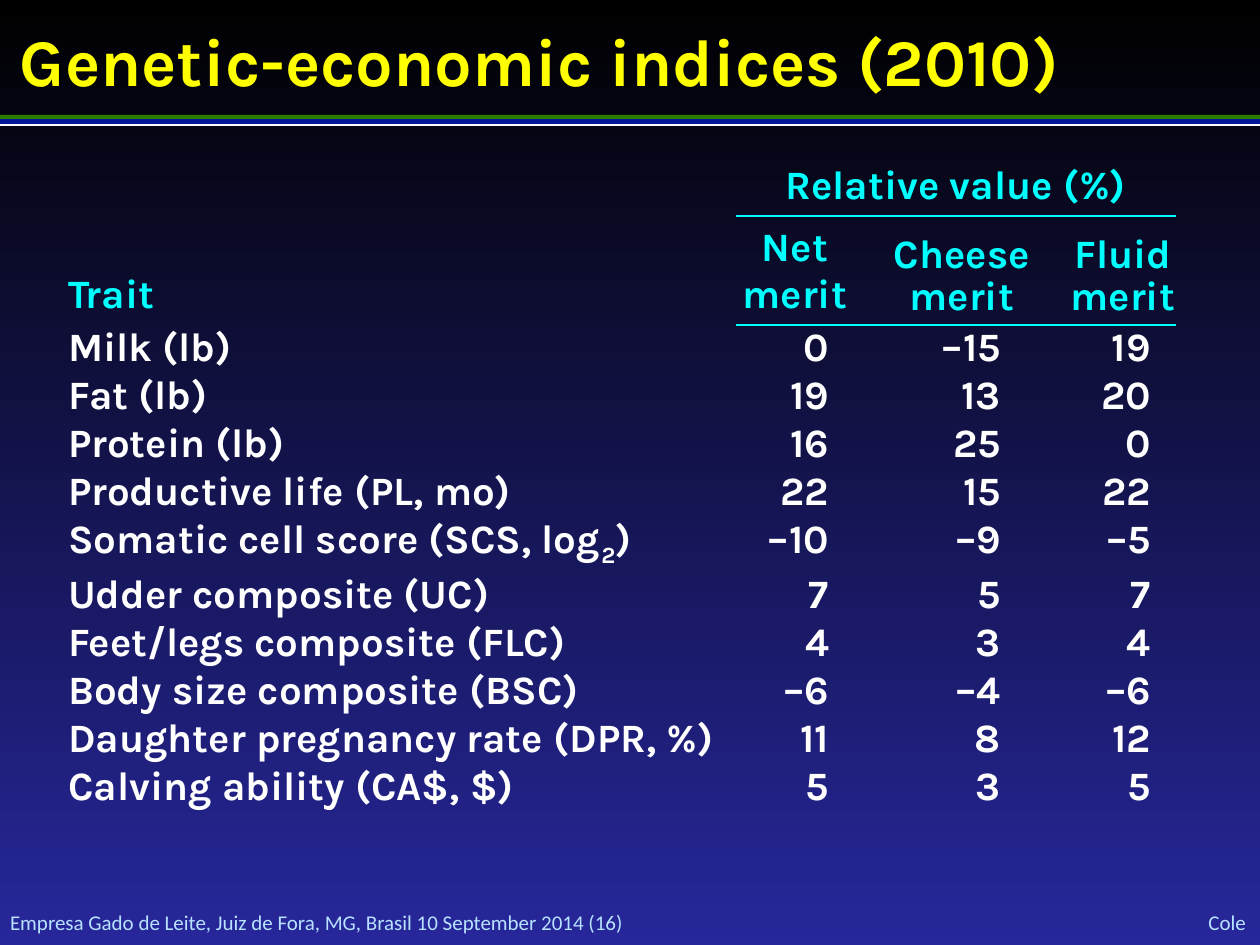
from lxml import etree
from pptx import Presentation
from pptx.dml.color import RGBColor
from pptx.enum.shapes import MSO_SHAPE
from pptx.enum.text import MSO_ANCHOR, MSO_AUTO_SIZE, PP_ALIGN
from pptx.oxml.ns import qn
from pptx.util import Pt

PX = 914400 // 126
LEFT, CENTER, RIGHT = PP_ALIGN.LEFT, PP_ALIGN.CENTER, PP_ALIGN.RIGHT
TOP, MIDDLE, BOTTOM = MSO_ANCHOR.TOP, MSO_ANCHOR.MIDDLE, MSO_ANCHOR.BOTTOM
RECT, NO_FIT = MSO_SHAPE.RECTANGLE, MSO_AUTO_SIZE.NONE

BLACK = RGBColor(0x00, 0x00, 0x00)
INDIGO = RGBColor(0x27, 0x27, 0x9B)
GREEN = RGBColor(0x2A, 0x7E, 0x00)
BLUE = RGBColor(0x00, 0x17, 0x99)
WHITE = RGBColor(0xFF, 0xFF, 0xFF)
YELLOW = RGBColor(0xFF, 0xFF, 0x00)
CYAN = RGBColor(0x00, 0xFF, 0xFF)
PALE = RGBColor(0xB8, 0xE2, 0xFF)

TITLE_FONT = {"name": "Karla", "size": Pt(38), "bold": True}
TABLE_FONT = {"name": "Karla", "size": Pt(23), "bold": True}
FOOTER_FONT = {"name": "Calibri", "size": Pt(12), "bold": False}
NO_GRID = "{2D5ABB26-0587-4C30-8999-92F81FD0307C}"

COLS = (668, 118, 216, 106)
VALUE_INSETS = (25, 69, 25)
HEADS = (("Net merit", 1.0), ("Cheese\nmerit", 0.9), ("Fluid merit", 0.9))
SUBSCRIPT = "₂"
TRAITS = (
    ("Milk (lb)", "0", "–15", "19"),
    ("Fat (lb)", "19", "13", "20"),
    ("Protein (lb)", "16", "25", "0"),
    ("Productive life (PL, mo)", "22", "15", "22"),
    ("Somatic cell score (SCS, log₂)", "–10", "–9", "–5"),
    ("Udder composite (UC)", "7", "5", "7"),
    ("Feet/legs composite (FLC)", "4", "3", "4"),
    ("Body size composite (BSC)", "–6", "–4", "–6"),
    ("Daughter pregnancy rate (DPR, %)", "11", "8", "12"),
    ("Calving ability (CA$, $)", "5", "3", "5"),
)


def emu(box):
    """Turn a sequence of px lengths into EMU."""
    return [v * PX for v in box]


def set_attrs(obj, values):
    """Set attributes of an object from a dict."""
    for name, value in values.items():
        setattr(obj, name, value)


def write(tf, text, font, color, align=LEFT, spacing=1.0):
    """Fill a text frame, one paragraph a line, with a lowered 2 where marked."""
    for i, line in enumerate(text.split("\n")):
        p = tf.add_paragraph() if i else tf.paragraphs[0]
        set_attrs(p, {"alignment": align, "line_spacing": spacing})
        before, mark, after = line.partition(SUBSCRIPT)
        for part in (before, "2" if mark else "", after):
            if part:
                r = p.add_run()
                r.text = part
                set_attrs(r.font, font)
                r.font.color.rgb = color
        if mark:
            p.runs[1].font._element.set("baseline", "-25000")


def text_area(sp, text, font, color, align=LEFT, anchor=TOP):
    """Format a shape as plain text without insets."""
    tf = sp.text_frame
    set_attrs(tf, {"margin_left": 0, "margin_top": 0, "margin_right": 0,
                   "margin_bottom": 0, "word_wrap": True,
                   "auto_size": NO_FIT, "vertical_anchor": anchor})
    write(tf, text, font, color, align)


def add_title(s, box, text):
    """Place the title placeholder."""
    sp = s.shapes.title
    set_attrs(sp, dict(zip(("left", "top", "width", "height"), emu(box))))
    text_area(sp, text, TITLE_FONT, YELLOW)


def add_bands(s, box):
    """Draw the three stripes under the title."""
    x, y, w, h = box
    for color, dy, dh in ((GREEN, 0, 4), (WHITE, h - 4, 4), (BLUE, 4, 5)):
        sp = s.shapes.add_shape(RECT, *emu((x, y + dy, w, dh)))
        sp.shadow.inherit = False
        sp.fill.solid()
        sp.fill.fore_color.rgb = color
        sp.line.fill.background()


def add_footer(s, box, left_text, right_text):
    """Place the footer texts at both ends of the box."""
    x, y, w, h = box
    split = w * 7 // 8
    for text, dx, dw, align in ((left_text, 0, split, LEFT),
                                (right_text, split, w - split, RIGHT)):
        sp = s.shapes.add_textbox(*emu((x + dx, y, dw, h)))
        text_area(sp, text, FOOTER_FONT, PALE, align, MIDDLE)


def add_border(cell, tag):
    """Draw a cyan line on one side of a cell."""
    ln = etree.Element(qn(tag), w=str(Pt(1.5)))
    fill = etree.SubElement(ln, qn("a:solidFill"))
    etree.SubElement(fill, qn("a:srgbClr"), val=str(CYAN))
    cell._tc.get_or_add_tcPr().insert(0, ln)


def set_cell(cell, text, color, align=LEFT, anchor=TOP, insets=(0, 0, 0, 0),
             spacing=1.0):
    """Write and format a table cell; insets are left, top, right, bottom."""
    names = ("margin_left", "margin_top", "margin_right", "margin_bottom")
    set_attrs(cell, dict(zip(names, emu(insets))))
    cell.vertical_anchor = anchor
    cell.fill.background()
    write(cell.text_frame, text, TABLE_FONT, color, align, spacing)


def add_traits(s, box):
    """Build the table of trait weights in the three indices."""
    heights = [53, 109] + [55 if SUBSCRIPT in t[0] else 48 for t in TRAITS]
    frame = s.shapes.add_table(len(heights), len(COLS), *emu(box))
    table = frame.table
    set_attrs(table, {"first_row": False, "horz_banding": False})
    table._tbl.tblPr.find(qn("a:tableStyleId")).text = NO_GRID
    for col, w in zip(table.columns, COLS):
        col.width = w * PX
    for row, h in zip(table.rows, heights):
        row.height = h * PX

    table.cell(0, 0).merge(table.cell(1, 0))
    table.cell(0, 1).merge(table.cell(0, 3))
    set_cell(table.cell(0, 0), "Trait", CYAN, LEFT, BOTTOM, (0, 0, 0, 6))
    set_cell(table.cell(0, 1), "Relative value (%)", CYAN, CENTER, TOP,
             (0, 0, 0, 6))
    for j, (head, spacing) in enumerate(HEADS, 1):
        set_cell(table.cell(1, j), head, CYAN, CENTER, BOTTOM, (0, 6, 0, 6),
                 spacing)
        add_border(table.cell(0, j), "a:lnB")
        add_border(table.cell(1, j), "a:lnT")
    for i, (trait, *values) in enumerate(TRAITS, 2):
        set_cell(table.cell(i, 0), trait, WHITE)
        for j, (value, inset) in enumerate(zip(values, VALUE_INSETS), 1):
            set_cell(table.cell(i, j), value, WHITE, RIGHT,
                     insets=(0, 0, inset, 0))


def main():
    """Build and save the slide."""
    prs = Presentation()
    set_attrs(prs, {"slide_width": 1260 * PX, "slide_height": 945 * PX})
    s = prs.slides.add_slide(prs.slide_layouts[5])
    fill = s.background.fill
    fill.gradient()
    fill.gradient_angle = 270
    for stop, color, pos in zip(fill.gradient_stops, (BLACK, INDIGO), (0, 1)):
        stop.color.rgb = color
        stop.position = pos
    add_footer(s, (10, 909, 1236, 26),
               "Empresa Gado de Leite, Juiz de Fora, MG, Brasil "
               "10 September 2014 (16)", "Cole")
    add_bands(s, (0, 115, 1260, 11))
    add_traits(s, (68, 163, sum(COLS), 646))
    add_title(s, (20, 20, 1134, 81), "Genetic-economic indices (2010)")
    prs.save("out.pptx")


if __name__ == "__main__":
    main()
